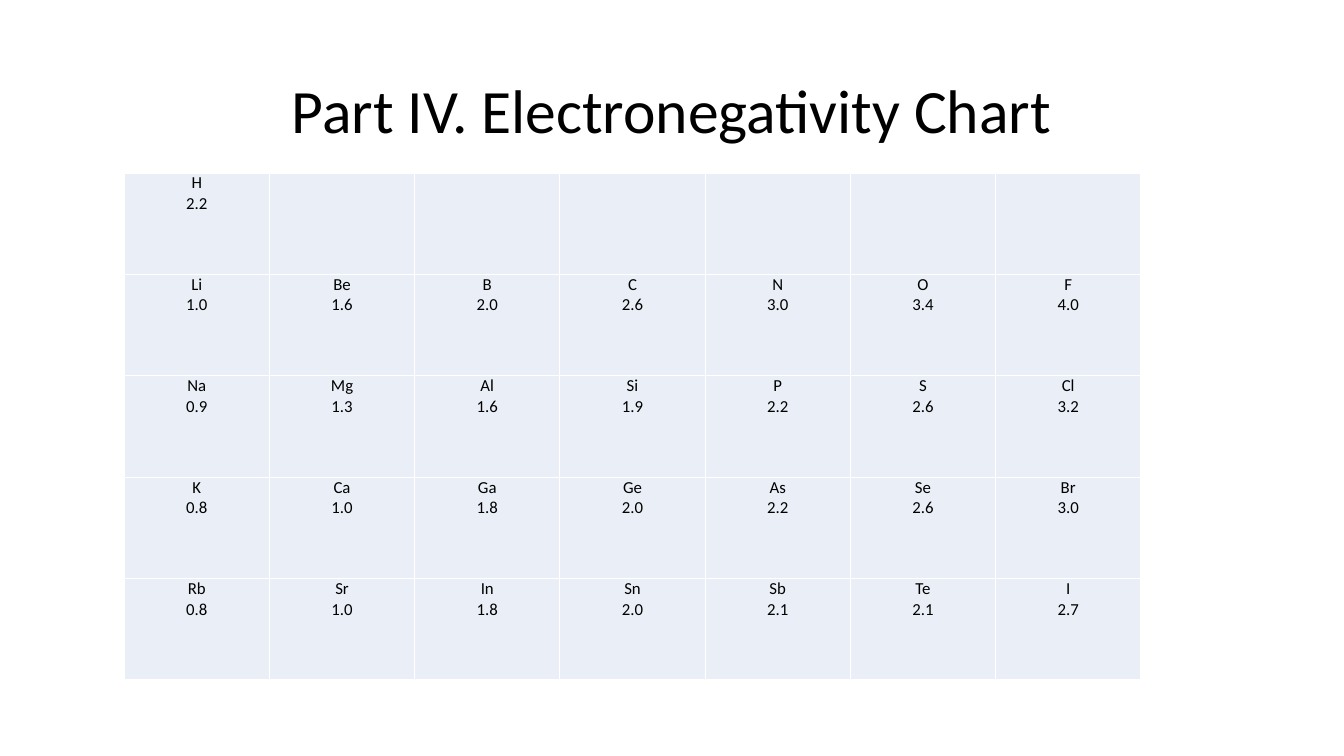
from lxml.etree import SubElement
from pptx import Presentation
from pptx.dml.color import RGBColor
from pptx.enum.text import MSO_ANCHOR, PP_ALIGN
from pptx.oxml.ns import qn
from pptx.util import Cm, Pt

TITLE = "Part IV. Electronegativity Chart"
PERIODS = [
    [("H", "2.2")],
    [("Li", "1.0"), ("Be", "1.6"), ("B", "2.0"), ("C", "2.6"),
     ("N", "3.0"), ("O", "3.4"), ("F", "4.0")],
    [("Na", "0.9"), ("Mg", "1.3"), ("Al", "1.6"), ("Si", "1.9"),
     ("P", "2.2"), ("S", "2.6"), ("Cl", "3.2")],
    [("K", "0.8"), ("Ca", "1.0"), ("Ga", "1.8"), ("Ge", "2.0"),
     ("As", "2.2"), ("Se", "2.6"), ("Br", "3.0")],
    [("Rb", "0.8"), ("Sr", "1.0"), ("In", "1.8"), ("Sn", "2.0"),
     ("Sb", "2.1"), ("Te", "2.1"), ("I", "2.7")],
]
GROUPS = max(len(period) for period in PERIODS)

BLACK = RGBColor(0x00, 0x00, 0x00)
WHITE = RGBColor(0xFF, 0xFF, 0xFF)
PALE_BLUE = RGBColor(0xEA, 0xEF, 0xF7)

GROUP_WIDTH = Cm(3.66)
PERIOD_HEIGHT = Cm(2.555)


def write(frame, lines, size, spacing=None):
    for index, line in enumerate(lines):
        paragraph = frame.add_paragraph() if index else frame.paragraphs[0]
        paragraph.alignment = PP_ALIGN.CENTER
        if spacing:
            paragraph.line_spacing = spacing
        run = paragraph.add_run()
        run.text = line
        run.font.name = "Calibri"
        run.font.size = Pt(size)
        run.font.color.rgb = BLACK


def add_borders(cell):
    properties = cell._tc.get_or_add_tcPr()
    for side in ("a:lnL", "a:lnR", "a:lnT", "a:lnB"):
        border = SubElement(properties, qn(side), w=str(Pt(1)))
        fill = SubElement(border, qn("a:solidFill"))
        SubElement(fill, qn("a:srgbClr"), val=str(WHITE))


def main():
    deck = Presentation()
    deck.slide_width, deck.slide_height = Cm(33.87), Cm(19.05)
    slide = deck.slides.add_slide(deck.slide_layouts[6])

    heading = slide.shapes.add_textbox(Cm(2.33), Cm(1.01), Cm(29.21), Cm(3.68)).text_frame
    heading.word_wrap = True
    heading.vertical_anchor = MSO_ANCHOR.MIDDLE
    write(heading, [TITLE], size=44, spacing=0.9)

    elements = slide.shapes.add_table(
        len(PERIODS), GROUPS, Cm(3.13), Cm(4.36),
        GROUP_WIDTH * GROUPS, PERIOD_HEIGHT * len(PERIODS)).table
    elements.first_row = False
    elements.horz_banding = False
    for column in elements.columns:
        column.width = GROUP_WIDTH
    for row in elements.rows:
        row.height = PERIOD_HEIGHT

    for cell in elements.iter_cells():
        add_borders(cell)
        cell.fill.solid()
        cell.fill.fore_color.rgb = PALE_BLUE
        cell.margin_left = cell.margin_right = Cm(0.19)
        cell.margin_top = cell.margin_bottom = 0

    for row, period in enumerate(PERIODS):
        for group, element in enumerate(period):
            write(elements.cell(row, group).text_frame, element, size=12)

    deck.save("out.pptx")


if __name__ == "__main__":
    main()
